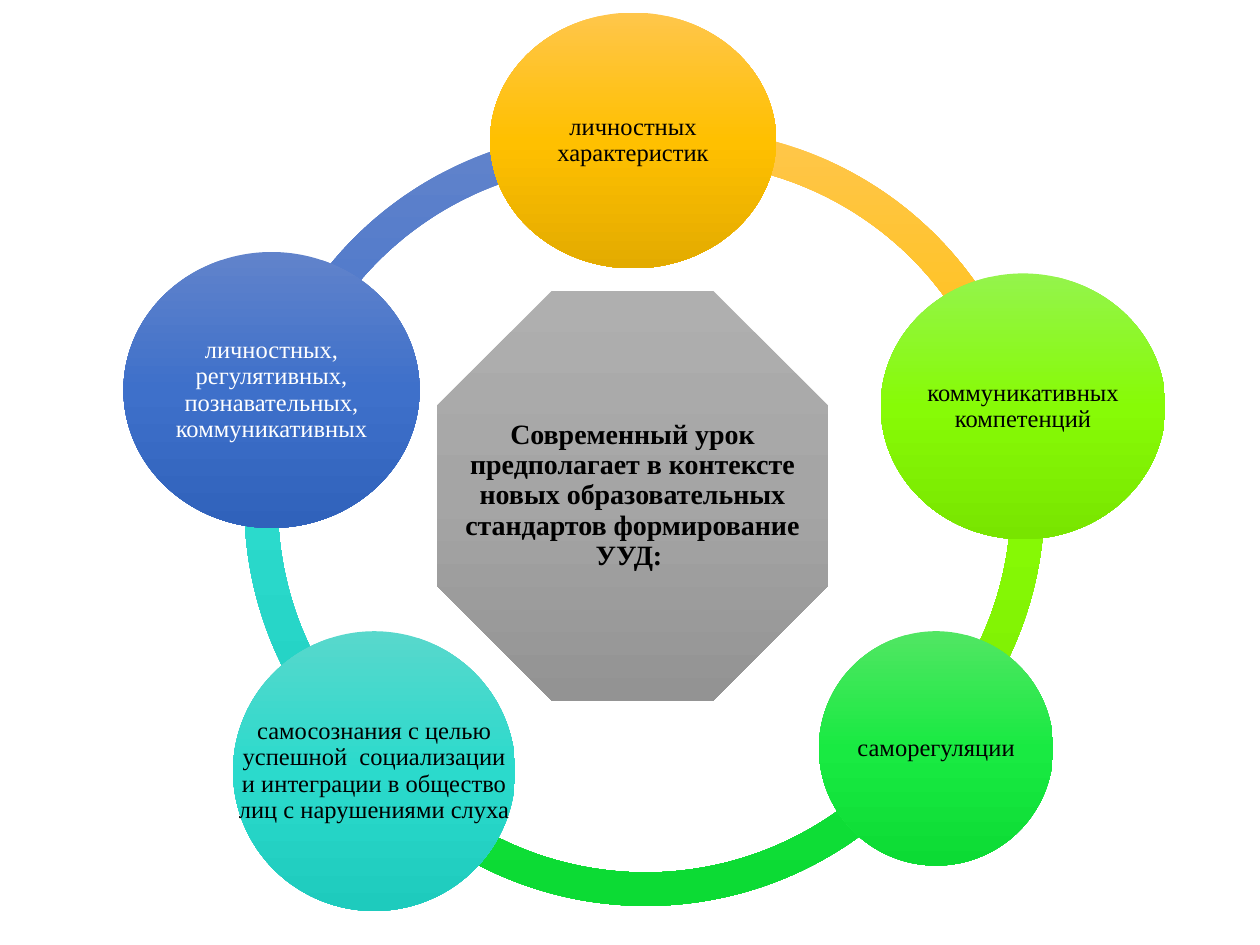
from copy import deepcopy
from dataclasses import dataclass

from pptx import Presentation
from pptx import util as u
from pptx.dml import color as colors
from pptx.enum import shapes, text


@dataclass(frozen=True)
class Theme:
    font: str = "Times New Roman"
    center_size: int = 16
    node_size: int = 14
    dark: str = "000000"
    light: str = "FFFFFF"
    gray: tuple = ("AFAFAF", "A5A5A5", "939393")
    amber: tuple = ("FFC64B", "FFC000", "E3AB00")
    lime: tuple = ("94F44C", "87FB06", "78E500")
    green: tuple = ("51E663", "19EA42", "0CDB34")
    teal: tuple = ("58D8CC", "2BDACC", "1ECBBD")
    blue: tuple = ("6183CB", "3E70CA", "3062BB")


THEME = Theme()
RING_SIZE = 5.77
RING_THICKNESS = 0.046
DEGREE = 0.6
INSET = 0.02

ARCS = [
    (1.97, 1.04, 197.07, 273.44, THEME.blue),
    (1.94, 1.12, 131.24, 198.64, THEME.teal),
    (2.24, 1.42, 35.4, 139.97, THEME.green),
    (2.52, 1.09, 344.51, 44.16, THEME.lime),
    (2.5, 1.02, 262.56, 345.94, THEME.amber),
]

CENTER = (
    "Современный урок предполагает в контексте новых образовательных "
    "стандартов формирование УУД: "
)

NODES = [
    ((3.89, 0.1, 2.27, 2.03), THEME.amber, THEME.dark,
     "личностных характеристик"),
    ((6.99, 2.17, 2.26, 2.11), THEME.lime, THEME.dark,
     "коммуникативных компетенций"),
    ((6.5, 5.01, 1.86, 1.86), THEME.green, THEME.dark, "саморегуляции"),
    ((1.85, 5.01, 2.24, 2.22), THEME.teal, THEME.dark,
     "самосознания с целью успешной  социализации и интеграции в общество "
     "лиц с нарушениями слуха"),
    ((0.98, 2, 2.35, 2.19), THEME.blue, THEME.light,
     "личностных, регулятивных, познавательных, коммуникативных"),
]


def fill_gradient(shape, palette):
    shape.fill.gradient()
    shape.fill.gradient_angle = 270
    last = shape.fill._xPr.gradFill.gsLst[-1]
    last.addnext(deepcopy(last))
    stops = shape.fill.gradient_stops
    for stop, position, shade in zip(stops, (0, 0.5, 1), palette):
        stop.position = position
        stop.color.rgb = colors.RGBColor.from_string(shade)


def add_figure(group, kind, area, palette):
    shape = group.shapes.add_shape(kind, *map(u.Inches, area))
    shape.shadow.inherit = False
    shape.line.fill.background()
    fill_gradient(shape, palette)
    return shape


def add_arc(group, left, top, start, end, palette):
    area = (left, top, RING_SIZE, RING_SIZE)
    arc = add_figure(group, shapes.MSO_SHAPE.BLOCK_ARC, area, palette)
    arc.adjustments[0] = start * DEGREE
    arc.adjustments[1] = end * DEGREE
    arc.adjustments[2] = RING_THICKNESS


def add_label(group, area, words, size, shade, bold=False):
    box = group.shapes.add_textbox(*map(u.Inches, area))
    frame = box.text_frame
    frame.word_wrap = True
    frame.vertical_anchor = text.MSO_ANCHOR.MIDDLE
    frame.margin_left = frame.margin_right = u.Inches(INSET)
    frame.margin_top = frame.margin_bottom = u.Inches(INSET)
    para = frame.paragraphs[0]
    para.alignment = text.PP_ALIGN.CENTER
    para.line_spacing = 0.9
    span = para.add_run()
    span.text = words
    span.font.name = THEME.font
    span.font.size = u.Pt(size)
    span.font.bold = bold
    span.font.color.rgb = colors.RGBColor.from_string(shade)


def main():
    deck = Presentation()
    deck.slide_width = u.Inches(10)
    deck.slide_height = u.Inches(7.5)
    page = deck.slides.add_slide(deck.slide_layouts[6])
    cycle = page.shapes.add_group_shape()

    for arc in ARCS:
        add_arc(cycle, *arc)

    middle = (3.47, 2.31, 3.1, 3.25)
    add_figure(cycle, shapes.MSO_SHAPE.OCTAGON, middle, THEME.gray)
    add_label(cycle, middle, CENTER, THEME.center_size, THEME.dark, bold=True)

    for area, palette, shade, words in NODES:
        add_figure(cycle, shapes.MSO_SHAPE.OVAL, area, palette)
        add_label(cycle, area, words, THEME.node_size, shade)

    deck.save("out.pptx")


if __name__ == "__main__":
    main()
